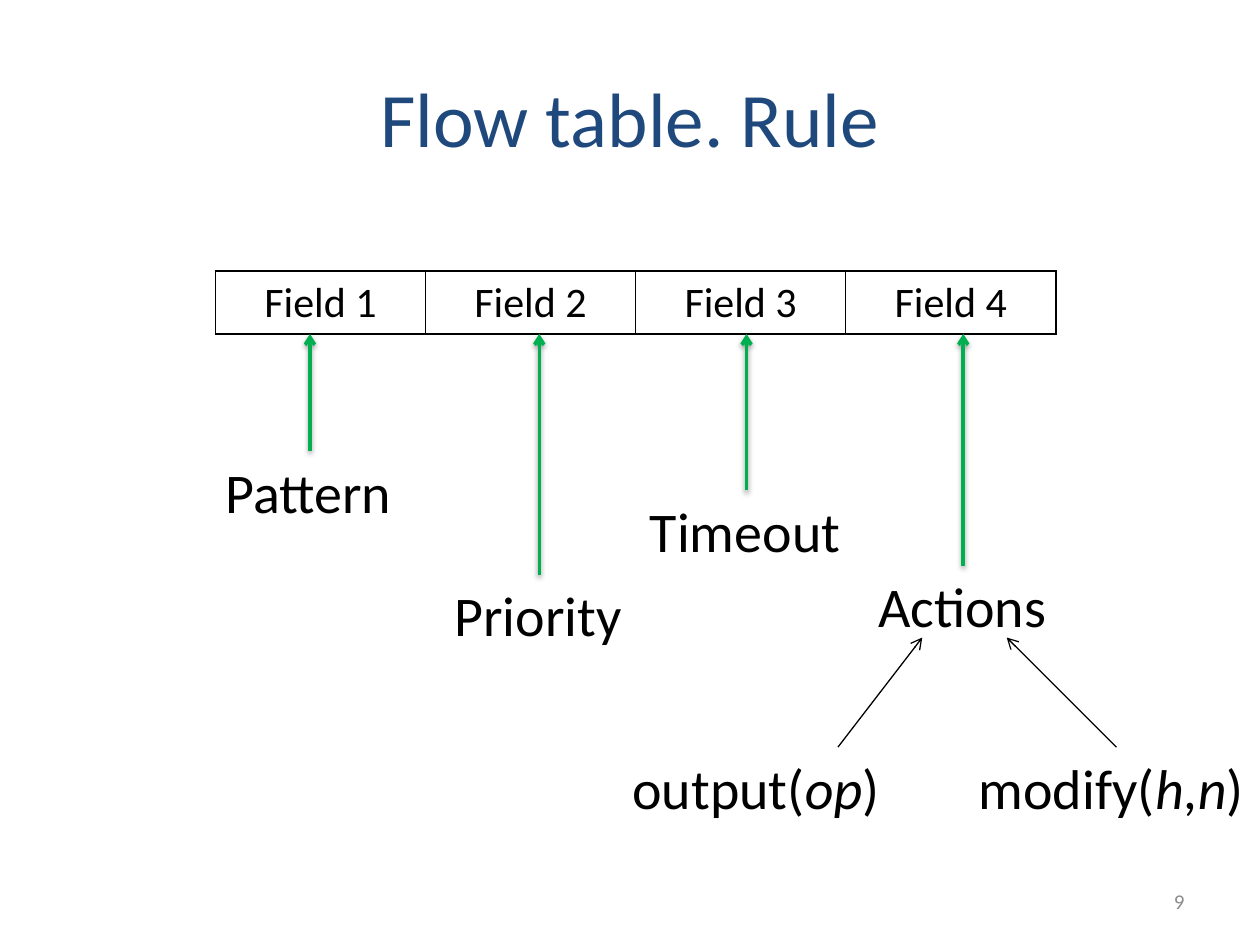
from collections import namedtuple

from lxml.etree import SubElement
from pptx import Presentation
from pptx.dml.color import RGBColor
from pptx.enum.shapes import MSO_CONNECTOR
from pptx.enum.text import MSO_ANCHOR, MSO_AUTO_SIZE, PP_ALIGN
from pptx.oxml.ns import qn
from pptx.util import Inches, Pt

WIDTH, HEIGHT = Inches(10), Inches(7.5)
COLUMN, ROW = WIDTH / 100, HEIGHT / 75  # the page is a grid of 100 by 75
FONT = "Calibri"
COLORS = {"title": "1F497D", "text": "000000", "number": "8C8C8C",
          "pointer": "00B050", "branch": "000000", "border": "000000"}

Box = namedtuple("Box", "left top width height")


def across(columns):
    return round(columns * COLUMN)


def down(rows):
    return round(rows * ROW)


def place(box):
    return across(box.left), down(box.top), across(box.width), down(box.height)


def add_span(para, text, size, color="text", italic=False):
    span = para.add_run()
    span.text = text
    span.font.name = FONT
    span.font.size = Pt(size)
    span.font.italic = italic
    span.font.color.rgb = RGBColor.from_string(COLORS[color])


def add_line_of_text(page, box, text, size, color, align):
    """Add one wrapped line, centred on the height of its box."""
    shape = page.shapes.add_textbox(*place(box))
    frame = shape.text_frame
    frame.word_wrap = True
    frame.vertical_anchor = MSO_ANCHOR.MIDDLE
    para = frame.paragraphs[0]
    para.alignment = align
    add_span(para, text, size, color)


def add_label(page, box, spans, indent=0):
    """Add a large label from (text, italic) spans."""
    shape = page.shapes.add_textbox(*place(box))
    frame = shape.text_frame
    frame.word_wrap = False
    frame.auto_size = MSO_AUTO_SIZE.SHAPE_TO_FIT_TEXT
    para = frame.paragraphs[0]
    para._p.get_or_add_pPr().set("marL", str(across(indent)))
    for text, italic in spans:
        add_span(para, text, 32, italic=italic)
    return shape


def add_arrow(page, start, end, color, weight, shadow=False):
    arrow = page.shapes.add_connector(
        MSO_CONNECTOR.STRAIGHT, across(start[0]), down(start[1]),
        across(end[0]), down(end[1]))
    arrow.line.color.rgb = RGBColor.from_string(COLORS[color])
    arrow.line.width = Pt(weight)
    SubElement(arrow.line._get_or_add_ln(), qn("a:tailEnd"), type="arrow")
    effects = SubElement(arrow._element.spPr, qn("a:effectLst"))
    if shadow:
        outer = SubElement(effects, qn("a:outerShdw"), blurRad=str(Pt(3.1)),
                           dist=str(Pt(1.6)), dir="5400000", rotWithShape="0")
        black = SubElement(outer, qn("a:srgbClr"), val="000000")
        SubElement(black, qn("a:alpha"), val="38000")
    return arrow


def add_borders(cell):
    properties = cell._tc.get_or_add_tcPr()
    for side in ("lnL", "lnR", "lnT", "lnB"):
        line = SubElement(properties, qn(f"a:{side}"), w=str(Pt(1)))
        fill = SubElement(line, qn("a:solidFill"))
        SubElement(fill, qn("a:srgbClr"), val=COLORS["border"])


def add_fields(page, box, names):
    table = page.shapes.add_table(1, len(names), *place(box)).table
    table.first_row = table.horz_banding = False
    for index, name in enumerate(names):
        table.columns[index].width = across(box.width / len(names))
        cell = table.cell(0, index)
        add_borders(cell)
        cell.fill.background()
        para = cell.text_frame.paragraphs[0]
        para.alignment = PP_ALIGN.CENTER
        add_span(para, name, 24)


def add_meaning(page, box, name, table_bottom):
    """Name a field and point from the name up to the table."""
    label = add_label(page, box, [(name, False)])
    middle = box.left + box.width / 2
    arrow = add_arrow(page, (middle, box.top), (middle, table_bottom),
                      "pointer", 2, shadow=True)
    arrow.begin_connect(label, 0)


def add_action(page, box, spans, start, end):
    add_label(page, box, spans, indent=5)
    add_arrow(page, (start, box.top), (end, 50.6), "branch", 0.75)


def main():
    deck = Presentation()
    deck.slide_width, deck.slide_height = WIDTH, HEIGHT
    page = deck.slides.add_slide(deck.slide_layouts[6])

    add_line_of_text(page, Box(5, 3, 90, 12.5), "Flow table. Rule", 44,
                     "title", PP_ALIGN.CENTER)
    add_line_of_text(page, Box(71.7, 69.5, 23.3, 4), "9", 12,
                     "number", PP_ALIGN.RIGHT)

    fields = Box(17.1, 21.5, 66.7, 5)
    add_fields(page, fields, [f"Field {number}" for number in range(1, 5)])

    meanings = [("Pattern", 16.9, 35.8, 15.4), ("Priority", 35.1, 45.6, 15.4),
                ("Timeout", 50.6, 38.9, 17.3), ("Actions", 68.7, 44.9, 15.5)]
    for name, left, top, width in meanings:
        add_meaning(page, Box(left, top, width, 6.4), name,
                    fields.top + fields.height)

    add_action(page, Box(71.7, 59.3, 28.3, 6.4),
               [("modify(", False), ("h,n", True), (")", False)], 88.6, 79.9)
    add_action(page, Box(44.2, 59.3, 26.9, 6.4),
               [("output(", False), ("op", True), (")", False)], 66.5, 73.2)

    deck.save("out.pptx")


if __name__ == "__main__":
    main()
